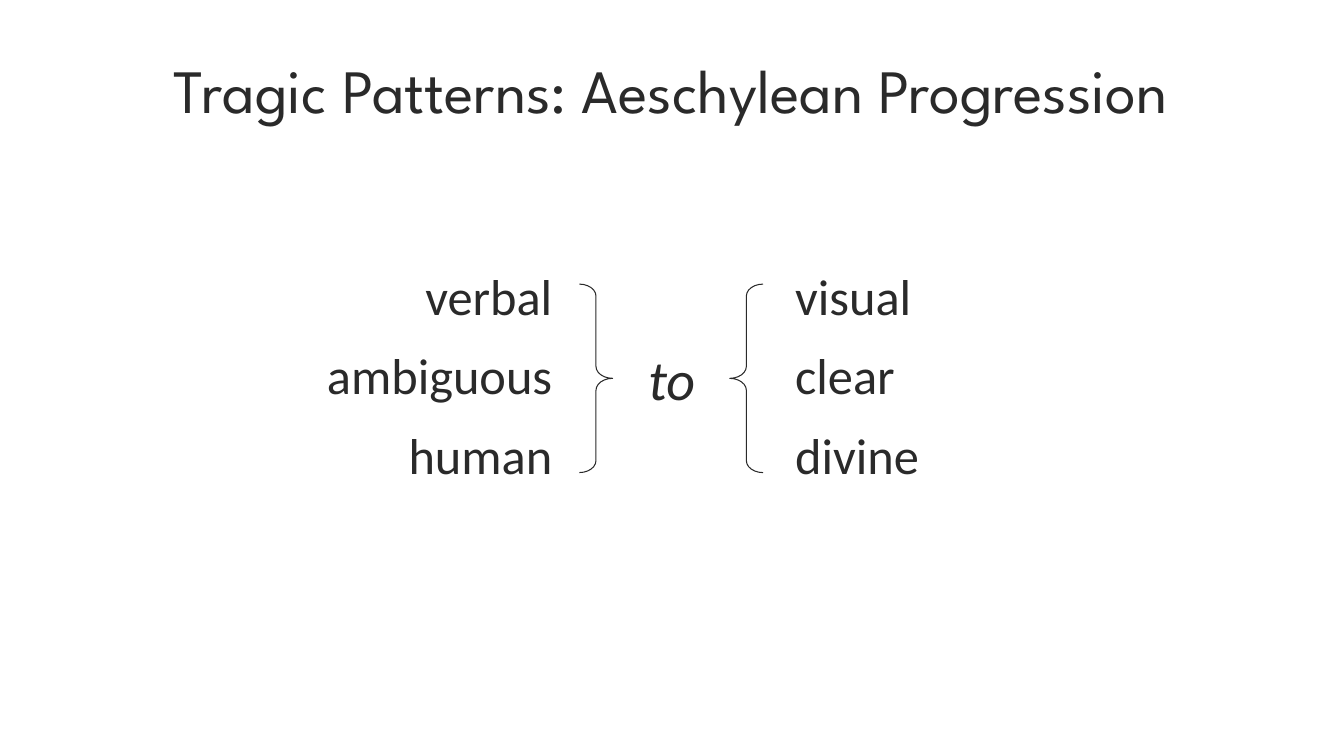
from pptx import Presentation
from pptx.dml.color import RGBColor
from pptx.enum.shapes import MSO_SHAPE as Shape
from pptx.enum.text import MSO_ANCHOR as Anchor, MSO_AUTO_SIZE as AutoSize, PP_ALIGN as Align
from pptx.util import Cm, Pt

COLORS = {"ink": "2A2A2A", "background": "FFFFFF"}
INK = RGBColor.from_string(COLORS["ink"])


def add_run(paragraph, text, size, font_name="Calibri", italic=None):
    run = paragraph.add_run()
    run.text = text
    run.font.size = Pt(size)
    run.font.name = font_name
    run.font.italic = italic
    run.font.color.rgb = INK


presentation = Presentation()
presentation.slide_width = Cm(33.87)
presentation.slide_height = Cm(19.05)
slide = presentation.slides.add_slide(presentation.slide_layouts[5])
slide.background.fill.solid()
slide.background.fill.fore_color.rgb = RGBColor.from_string(COLORS["background"])

title = slide.shapes.title
title.left, title.top, title.width, title.height = Cm(1.73), Cm(1.37), Cm(30.38), Cm(1.96)
title_frame = title.text_frame
title_frame.word_wrap = False
title_frame.auto_size = AutoSize.SHAPE_TO_FIT_TEXT
title_frame.vertical_anchor = Anchor.MIDDLE
title_paragraph = title_frame.paragraphs[0]
title_paragraph.alignment = Align.CENTER
title_paragraph.line_spacing = 0.9
add_run(title_paragraph, "Tragic Patterns: Aeschylean Progression", 44, "League Spartan")

columns = [
    (6.55, Align.RIGHT, ["verbal", "ambiguous", "human"]),
    (19.66, Align.LEFT, ["visual", "clear", "divine"]),
]
for left, alignment, words in columns:
    column = slide.shapes.add_textbox(Cm(left), Cm(6.73), Cm(7.62), Cm(5.61))
    frame = column.text_frame
    frame.word_wrap = True
    frame.vertical_anchor = Anchor.MIDDLE
    frame.margin_left = Cm(0.38)
    for index, word in enumerate(words):
        paragraph = frame.add_paragraph() if index else frame.paragraphs[0]
        paragraph.alignment = alignment
        paragraph.line_spacing = 0.9
        paragraph.space_before = Pt(18)
        add_run(paragraph, word, 36)

link = slide.shapes.add_textbox(Cm(16.08), Cm(8.56), Cm(1.7), Cm(1.96))
link_frame = link.text_frame
link_frame.word_wrap = False
link_frame.auto_size = AutoSize.SHAPE_TO_FIT_TEXT
link_frame.vertical_anchor = Anchor.MIDDLE
link_frame.paragraphs[0].alignment = Align.CENTER
add_run(link_frame.paragraphs[0], "to", 40, italic=True)

for kind, left in [(Shape.RIGHT_BRACE, 14.6), (Shape.LEFT_BRACE, 18.39)]:
    brace = slide.shapes.add_shape(kind, Cm(left), Cm(7.16), Cm(0.84), Cm(4.75))
    brace.shadow.inherit = False
    brace.adjustments[0] = 0.36
    brace.adjustments[1] = 0.5
    brace.fill.background()
    brace.line.color.rgb = INK
    brace.line.width = Pt(0.75)

presentation.save("out.pptx")
